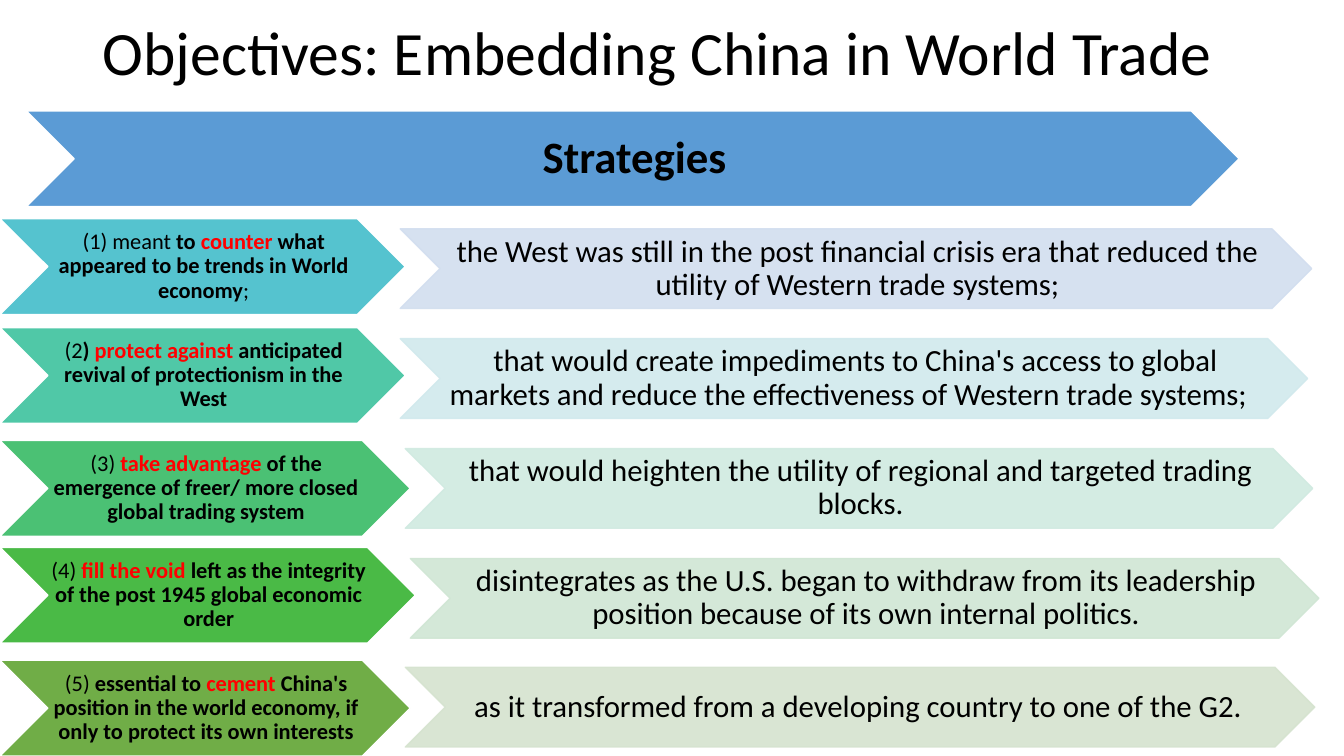
from dataclasses import dataclass

from lxml import etree
from pptx import Presentation
from pptx.dml.color import RGBColor
from pptx.enum.shapes import MSO_SHAPE
from pptx.enum.text import MSO_ANCHOR, MSO_AUTO_SIZE, PP_ALIGN
from pptx.oxml.ns import qn
from pptx.util import Inches, Pt

CHEVRON = MSO_SHAPE.CHEVRON
MIDDLE = MSO_ANCHOR.MIDDLE
LEFT, CENTER = PP_ALIGN.LEFT, PP_ALIGN.CENTER
NO_AUTOFIT = MSO_AUTO_SIZE.NONE

FONT = "Calibri"
BLACK, WHITE, RED = "000000", "FFFFFF", "FF0000"
GOAL_HEIGHT, REASON_HEIGHT = 0.95, 0.79
OVERLAP = 0.05


@dataclass
class Span:
    text: str
    bold: bool = False
    color: str = BLACK


@dataclass
class Chevron:
    left: float
    top: float
    width: float
    height: float
    fill: str
    outline: str
    size: int
    margin: float
    spans: list[Span]
    opacity: int = 100


@dataclass
class Strategy:
    top: float
    goal_width: float
    goal_fill: str
    goal: list[Span]
    reason_top: float
    reason_width: float
    reason_fill: str
    reason: str


STRATEGIES = [
    Strategy(2.17, 4.02, "55C3CF",
             [Span("(1) meant "), Span("to ", True), Span("counter", True, RED),
              Span(" what appeared to be trends in World economy", True), Span(";")],
             2.27, 9.04, "D2DEEF",
             "the West was still in the post financial crisis era that reduced the "
             "utility of Western trade systems;"),
    Strategy(3.25, 4.02, "50C8A7",
             [Span("(2"), Span(") ", True), Span("protect against ", True, RED),
              Span("anticipated revival of protectionism in the West", True)],
             3.36, 9.0, "D1E9ED",
             "that would create impediments to China's access to global markets and "
             "reduce the effectiveness of Western trade systems;  "),
    Strategy(4.37, 4.07, "4BC174",
             [Span("(3) "), Span("take advantage ", True, RED),
              Span("of the emergence of freer/ more closed global trading system", True)],
             4.45, 9.0, "D0EAE1",
             "that would heighten the utility of regional and targeted trading blocks."),
    Strategy(5.43, 4.12, "4ABA46",
             [Span("(4) "), Span("fill the void ", True, RED),
              Span("left as the integrity of the post 1945 global economic order", True)],
             5.54, 9.01, "D0E6D4",
             "disintegrates as the U.S. began to withdraw from its leadership position "
             "because of its own internal politics."),
    Strategy(6.55, 4.07, "70AD47",
             [Span("(5) "), Span("essential to ", True), Span("cement", True, RED),
              Span(" China's position in the world economy, if only to protect its own "
                   "interests", True)],
             6.62, 9.02, "D5E3CF",
             "as it transformed from a developing country to one of the G2. "),
]


def rgb(value: str) -> RGBColor:
    return RGBColor.from_string(value)


def write_text(frame, spans: list[Span], size: int, alignment) -> None:
    frame.word_wrap = True
    frame.auto_size = NO_AUTOFIT
    frame.vertical_anchor = MIDDLE
    para = frame.paragraphs[0]
    para.alignment = alignment
    para.line_spacing = 0.9
    for span in spans:
        run = para.add_run()
        run.text = span.text
        run.font.name = FONT
        run.font.size = Pt(size)
        run.font.bold = span.bold
        run.font.color.rgb = rgb(span.color)


def draw_chevron(page, item: Chevron) -> None:
    shape = page.shapes.add_shape(CHEVRON, Inches(item.left), Inches(item.top),
                                  Inches(item.width), Inches(item.height))
    shape.shadow.inherit = False
    shape.fill.solid()
    shape.fill.fore_color.rgb = rgb(item.fill)
    shape.line.color.rgb = rgb(item.outline)
    shape.line.width = Pt(1)
    if item.opacity < 100:
        for color in shape.element.spPr.iter(qn("a:srgbClr")):
            etree.SubElement(color, qn("a:alpha"), val=str(item.opacity * 1000))
    frame = shape.text_frame
    frame.margin_left = Inches(item.margin)
    frame.margin_right = 0
    frame.margin_top = frame.margin_bottom = Inches(item.margin / 2)
    write_text(frame, item.spans, item.size, CENTER)


def draw_strategy(page, row: Strategy) -> None:
    draw_chevron(page, Chevron(0, row.top, row.goal_width, GOAL_HEIGHT,
                               row.goal_fill, WHITE, 16, 0.02, row.goal))
    draw_chevron(page, Chevron(row.goal_width - OVERLAP, row.reason_top,
                               row.reason_width, REASON_HEIGHT, row.reason_fill,
                               row.reason_fill, 22, 0.03, [Span(row.reason)], 90))


def main() -> None:
    deck = Presentation()
    deck.slide_width, deck.slide_height = Inches(13.33), Inches(7.5)
    page = deck.slides.add_slide(deck.slide_layouts[5])

    # Title
    title = page.shapes.title
    title.left, title.top = Inches(0.92), Inches(0)
    title.width, title.height = Inches(11.5), Inches(1.1)
    write_text(title.text_frame, [Span("Objectives: Embedding China in World Trade")],
               44, LEFT)

    # Heading band
    draw_chevron(page, Chevron(0.26, 1.1, 12.03, GOAL_HEIGHT, "5B9BD5", WHITE,
                               32, 0.04, [Span("Strategies", True)]))

    # One goal and its reason per row
    for row in STRATEGIES:
        draw_strategy(page, row)

    deck.save("out.pptx")


if __name__ == "__main__":
    main()
